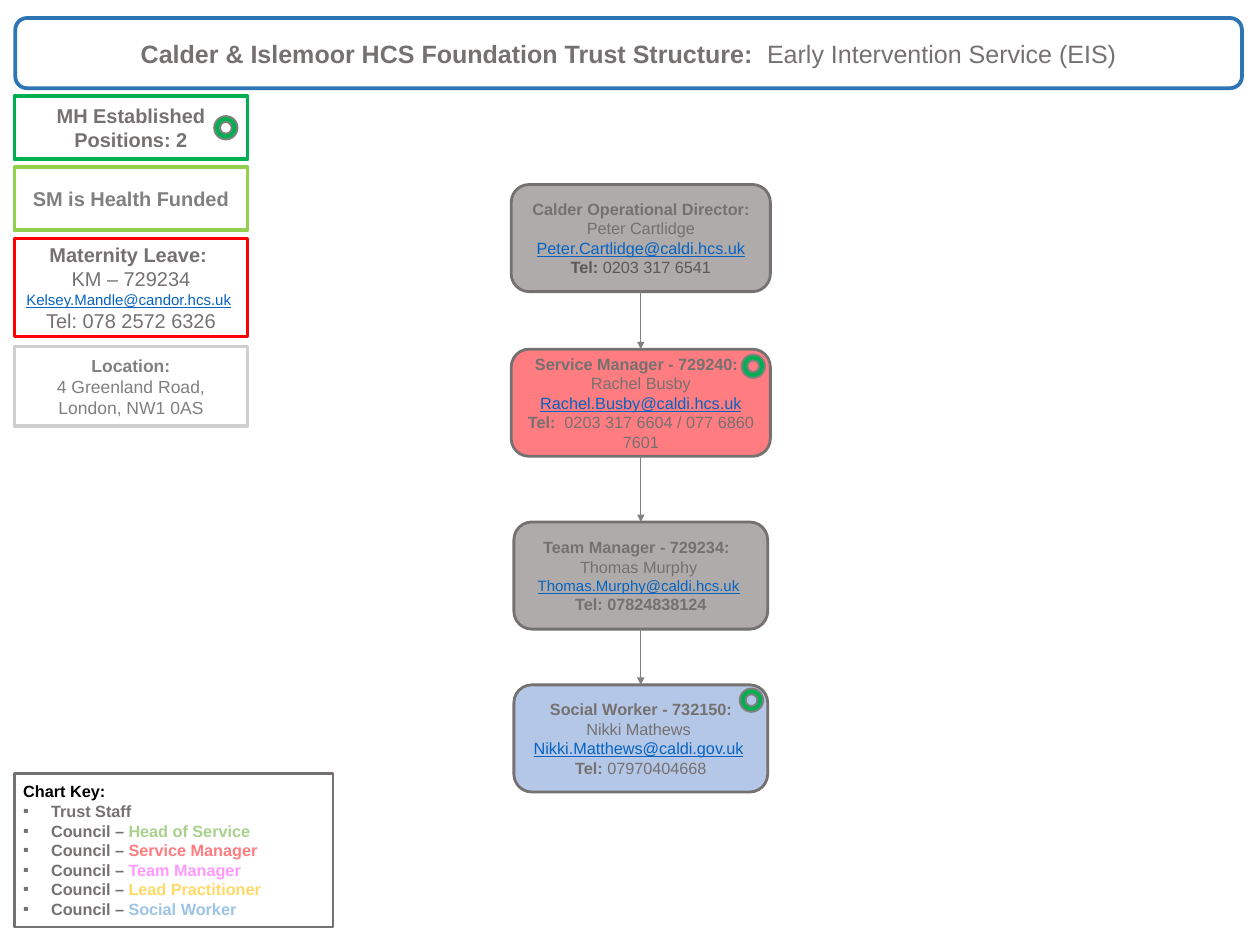
from lxml import etree
from pptx import Presentation
from pptx.dml.color import RGBColor
from pptx.enum import shapes, text
from pptx.oxml import ns
from pptx.util import Inches, Pt

COLOURS = {
    "white": "FFFFFF", "black": "000000", "grey": "767171", "mid": "808080",
    "dark": "595959", "silver": "AFABAB", "pale": "D0CECE", "navy": "2E75B6",
    "link": "0563C1", "green": "00B050", "lime": "92D050", "red": "FF0000",
    "coral": "FF7C80", "sky": "B4C7E7", "head": "A9D18E", "team": "FF99FF",
    "lead": "FFD966", "social": "9DC3E6",
}
SHAPE = shapes.MSO_SHAPE


def rgb(name):
    return RGBColor.from_string(COLOURS[name])


def add_run(p, words, size, colour="grey", bold=False, link=False):
    r = p.add_run()
    r.text = words
    r.font.name = "Arial"
    r.font.size = Pt(size)
    r.font.bold = bold
    r.font.underline = link
    r.font.color.rgb = rgb("link" if link else colour)


def add_box(s, kind, box, fill, line, width):
    sp = s.shapes.add_shape(kind, *(Inches(v) for v in box))
    sp.shadow.inherit = False
    sp.fill.solid()
    sp.fill.fore_color.rgb = rgb(fill)
    sp.line.color.rgb = rgb(line)
    sp.line.width = Pt(width)
    return sp


def add_text(sp, paragraphs, size, colour="grey", align=text.PP_ALIGN.CENTER):
    tf = sp.text_frame
    tf.word_wrap = True
    tf.vertical_anchor = text.MSO_ANCHOR.MIDDLE
    for i, runs in enumerate(paragraphs):
        p = tf.add_paragraph() if i else tf.paragraphs[0]
        p.alignment = align
        for words, style in runs:
            add_run(p, words, **{"size": size, "colour": colour, **style})


def add_marker(s, left, top):
    add_box(s, SHAPE.DONUT, (left, top, 0.26, 0.26), "green", "mid", 1.5)


def add_title(s, box):
    sp = add_box(s, SHAPE.ROUNDED_RECTANGLE, box, "white", "navy", 3)
    add_text(sp, [[("Calder & Islemoor HCS Foundation Trust Structure:  ", BOLD),
                   ("Early Intervention Service (EIS)", {})]], 20)


def add_sidebar(s, left, width):
    panels = [
        (1.07, 0.7, "green", 16, "grey", [[("MH Established Positions: 2", BOLD)]]),
        (1.86, 0.7, "lime", 16, "mid", [[("SM is Health Funded", BOLD)]]),
        (2.65, 1.09, "red", 16, "grey", [
            [("Maternity Leave: ", BOLD)],
            [("KM – 729234", {})],
            [("Kelsey.Mandle@candor.hcs.uk", SMALL_LINK), (" ", {"size": 12})],
            [("Tel: 078 2572 6326", {})]]),
        (3.85, 0.88, "pale", 14, "mid", [
            [("Location:", BOLD)],
            [("4 Greenland Road, London, NW1 0AS", {})]]),
    ]
    for top, height, line, size, colour, paragraphs in panels:
        sp = add_box(s, SHAPE.RECTANGLE, (left, top, width, height), "white", line, 3)
        add_text(sp, paragraphs, size, colour)
    add_marker(s, left + 2.22, 1.29)


def add_arrow(s, upper, lower):
    line = s.shapes.add_connector(shapes.MSO_CONNECTOR.STRAIGHT, 0, 0, 0, 0)
    line.begin_connect(upper, 2)
    line.end_connect(lower, 0)
    line.line.color.rgb = rgb("mid")
    line.line.width = Pt(0.5)
    etree.SubElement(line.line._get_or_add_ln(), ns.qn("a:tailEnd"), type="triangle")
    etree.SubElement(line._element.spPr, ns.qn("a:effectLst"))


def add_chain(s, centre, height):
    posts = [
        (2.05, 2.88, "silver", [
            [("Calder Operational Director:", BOLD)],
            [("Peter Cartlidge ", {}), ("Peter.Cartlidge@caldi.hcs.uk", LINK)],
            [("Tel: ", {"bold": True, "colour": "dark"}),
             ("0203 317 6541", {"colour": "dark"})]]),
        (3.88, 2.88, "coral", [
            [("Service Manager - 729240:  ", BOLD)],
            [("Rachel Busby", {})],
            [("Rachel.Busby@caldi.hcs.uk", LINK)],
            [("Tel:  ", BOLD), ("0203 317 6604 / 077 6860 7601", {})]]),
        (5.8, 2.82, "silver", [
            [("Team Manager - 729234:  ", BOLD)],
            [("Thomas Murphy ", {})],
            [("Thomas.Murphy@caldi.hcs.uk", SMALL_LINK), (" ", {"size": 12})],
            [("Tel: 07824838124", BOLD)]]),
        (7.61, 2.82, "sky", [
            [("Social Worker - 732150:", BOLD)],
            [("Nikki Mathews ", {})],
            [("Nikki.Matthews@caldi.gov.uk", LINK), (" ", {})],
            [("Tel:", BOLD), (" 07970404668", {})]]),
    ]
    upper = None
    for top, width, fill, paragraphs in posts:
        box = (centre - width / 2, top, width, height)
        sp = add_box(s, SHAPE.ROUNDED_RECTANGLE, box, fill, "grey", 2.25)
        add_text(sp, paragraphs, 13)
        if upper is not None:
            add_arrow(s, upper, sp)
        upper = sp
    add_marker(s, centre + 1.12, 3.94)
    add_marker(s, centre + 1.1, 7.65)


def add_key(s, box):
    roles = [("Head of Service", "head"), ("Service Manager", "coral"),
             ("Team Manager", "team"), ("Lead Practitioner", "lead"),
             ("Social Worker", "social")]
    paragraphs = [[("Chart Key:", {"bold": True, "colour": "black"})],
                  [("Trust Staff", BOLD)]]
    for role, colour in roles:
        paragraphs.append([("Council – ", BOLD),
                           (role, {"bold": True, "colour": colour})])
    sp = add_box(s, SHAPE.RECTANGLE, box, "white", "grey", 2.25)
    add_text(sp, paragraphs, 13, align=text.PP_ALIGN.LEFT)
    for p in sp.text_frame.paragraphs[1:]:
        pPr = p._p.get_or_add_pPr()
        pPr.set("marL", str(Inches(0.31)))
        pPr.set("indent", str(-Inches(0.31)))
        etree.SubElement(pPr, ns.qn("a:buFont"), typeface="Arial")
        etree.SubElement(pPr, ns.qn("a:buChar"), char="▪")


BOLD = {"bold": True}
LINK = {"link": True}
SMALL_LINK = {"link": True, "size": 12}


def main():
    prs = Presentation()
    prs.slide_width, prs.slide_height = Inches(14), Inches(10.5)
    s = prs.slides.add_slide(prs.slide_layouts[6])
    add_title(s, (0.17, 0.2, 13.63, 0.78))
    add_sidebar(s, 0.16, 2.59)
    add_chain(s, 7.12, 1.19)
    add_key(s, (0.16, 8.59, 3.54, 1.71))
    prs.save("out.pptx")


if __name__ == "__main__":
    main()
